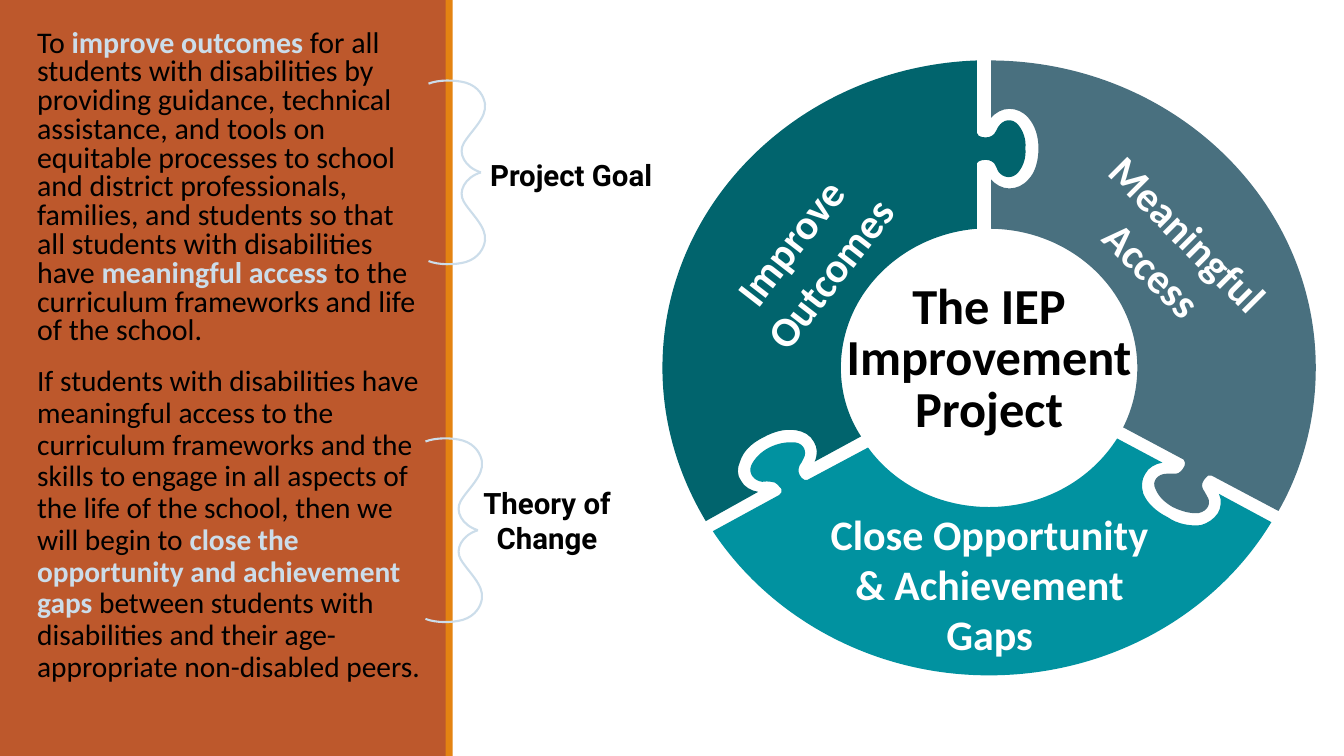
from pptx import Presentation
from pptx import util as u
from pptx.dml import color as c
from pptx.enum import shapes, text
from pptx.oxml import xmlchemy as xml

PX = 9144
BLACK, WHITE, PALE = "000000", "FFFFFF", "CCDDEA"

LEFT = [
    (735, 477), (731, 472, 731, 464, 734, 458), (737, 448, 745, 440, 757, 434),
    (768, 428, 779, 425, 790, 427), (797, 428, 804, 432, 807, 438),
    (811, 444, 811, 451, 808, 458), (854, 433), (841, 413, 834, 390, 834, 365),
    (834, 292, 894, 233, 969, 227), (969, 162), (970, 161, 971, 159, 974, 159),
    (979, 158, 983, 159, 986, 162), (988, 165, 989, 168, 990, 170),
    (995, 177, 1004, 178, 1010, 171), (1015, 165, 1018, 156, 1017, 147),
    (1018, 139, 1015, 130, 1010, 124), (1004, 117, 995, 118, 990, 126),
    (989, 128, 988, 130, 986, 133), (983, 136, 979, 137, 974, 136),
    (971, 136, 970, 134, 969, 132), (969, 60), (796, 66, 657, 200, 657, 365),
    (657, 420, 673, 472, 700, 517), (752, 488), (745, 487, 738, 483, 735, 477),
]
RIGHT = [
    (1001, 108), (1008, 108, 1015, 111, 1020, 117),
    (1027, 125, 1030, 136, 1030, 147), (1030, 159, 1027, 171, 1020, 178),
    (1015, 184, 1008, 187, 1001, 187), (994, 187, 987, 183, 983, 178),
    (983, 227), (1063, 228, 1128, 289, 1128, 365),
    (1128, 386, 1123, 406, 1114, 424), (1174, 456),
    (1175, 458, 1176, 460, 1175, 462), (1173, 466, 1170, 470, 1166, 470),
    (1162, 470, 1160, 470, 1157, 470), (1148, 470, 1142, 478, 1146, 485),
    (1149, 493, 1156, 499, 1163, 503), (1171, 507, 1181, 510, 1189, 509),
    (1198, 507, 1202, 499, 1197, 492), (1196, 490, 1195, 488, 1193, 485),
    (1191, 481, 1193, 477, 1196, 474), (1197, 472, 1199, 471, 1202, 472),
    (1268, 507), (1292, 465, 1305, 416, 1305, 365),
    (1305, 197, 1161, 61, 983, 60), (983, 117),
    (987, 112, 994, 108, 1001, 108),
]
BASE = [
    (1208, 509), (1204, 515, 1198, 519, 1191, 521),
    (1180, 522, 1168, 520, 1158, 513), (1146, 507, 1138, 499, 1134, 490),
    (1132, 483, 1132, 476, 1136, 470), (1139, 464, 1146, 460, 1153, 459),
    (1108, 435), (1082, 476, 1035, 503, 981, 503),
    (931, 503, 887, 480, 861, 444), (801, 476),
    (799, 477, 797, 476, 795, 474), (792, 470, 791, 467, 793, 462),
    (794, 460, 796, 458, 797, 455), (801, 448, 797, 440, 789, 439),
    (780, 438, 771, 440, 763, 444), (755, 448, 748, 455, 745, 462),
    (742, 470, 748, 477, 756, 478), (759, 478, 762, 477, 765, 478),
    (770, 478, 772, 482, 775, 485), (776, 487, 775, 490, 773, 491),
    (707, 527), (764, 613, 866, 670, 981, 670),
    (1101, 670, 1206, 609, 1261, 518), (1209, 490),
    (1212, 496, 1211, 504, 1208, 509),
]
BRACE = [
    (0, 88), (10, 92, 26, 92, 37, 89), (50, 85, 55, 75, 56, 68),
    (58, 54, 42, 41, 35, 29), (29, 19, 36, 5, 52, 0),
]

GOAL = [
    ("To ", BLACK), ("improve outcomes ", PALE),
    ("for all students with disabilities by providing guidance, technical "
     "assistance, and tools on equitable processes to school and district "
     "professionals, families, and students so that all students with "
     "disabilities have ", BLACK),
    ("meaningful access ", PALE),
    ("to the curriculum frameworks and life of the school.", BLACK),
]
THEORY = [
    ("If students with disabilities have meaningful access to the curriculum "
     "frameworks and the skills to engage in all aspects of the life of the "
     "school, then we will begin to ", BLACK),
    ("close the opportunity and achievement gaps ", PALE),
    ("between students with disabilities and their age-appropriate "
     "non-disabled peers.", BLACK),
]


def rgb(code):
    return c.RGBColor.from_string(code)


def put(obj, form):
    for key, val in form.items():
        setattr(obj, key, val)


def paint(fill, code):
    fill.solid()
    fill.fore_color.rgb = rgb(code)


def bar(slide, box, code):
    shape = slide.shapes.add_shape(
        shapes.MSO_SHAPE.RECTANGLE, *[n * PX for n in box])
    shape.shadow.inherit = False
    paint(shape.fill, code)
    shape.line.fill.background()


def write(para, runs, font, form):
    put(para, form)
    for words, code, bold in runs:
        run = para.add_run()
        run.text = words
        put(run.font, {**font, "bold": bold})
        run.font.color.rgb = rgb(code)


def frame(slide, box, pad):
    shape = slide.shapes.add_textbox(*[n * PX for n in box])
    put(shape.text_frame, {
        "word_wrap": True, "vertical_anchor": text.MSO_ANCHOR.TOP,
        "margin_left": 10 * PX, "margin_right": 10 * PX,
        "margin_top": pad * PX, "margin_bottom": pad * PX})
    return shape


def label(slide, box, words, size, code=BLACK, face="Calibri", turn=0,
          pad=10, space=1.0):
    shape = frame(slide, box, pad)
    shape.rotation = turn
    write(shape.text_frame.paragraphs[0], [(words, code, True)],
          {"size": u.Pt(size), "name": face},
          {"alignment": text.PP_ALIGN.CENTER, "line_spacing": space})


def body(slide):
    area = frame(slide, (17, 25, 417, 696), 5).text_frame
    paras = [area.paragraphs[0], area.add_paragraph()]
    for para, runs, size, space, gap in zip(
            paras, (GOAL, THEORY), (21.4, 21), (0.8, 0.9), (0, 14)):
        write(para, [(words, code, code == PALE) for words, code in runs],
              {"size": u.Pt(size), "name": "Calibri"},
              {"line_spacing": space, "space_before": u.Pt(gap)})
        para._p.get_or_add_pPr().set("marL", str(10 * PX))


def curve(slide, segs, shut):
    dots = [seg[i:i + 2] for seg in segs for i in range(0, len(seg), 2)]
    pen = slide.shapes.build_freeform(*dots[0], scale=PX)
    pen.add_line_segments(dots[1:], close=shut)
    shape = pen.convert_to_shape()
    shape.shadow.inherit = False
    lines = iter(shape._element.xpath(".//a:path/a:lnTo"))
    for seg in segs[1:]:
        first = next(lines)
        if len(seg) == 6:
            bend = xml.OxmlElement("a:cubicBezTo")
            first.addprevious(bend)
            for line in (first, next(lines), next(lines)):
                bend.append(line[0])
                line.getparent().remove(line)
    return shape


def piece(slide, segs, code):
    shape = curve(slide, segs, True)
    paint(shape.fill, code)
    shape.line.fill.background()


def brace(slide, left, mid):
    for side in (1, -1):
        segs = [tuple(mid + side * n if i % 2 else left + n
                      for i, n in enumerate(seg)) for seg in BRACE]
        shape = curve(slide, segs, False)
        shape.fill.background()
        shape.line.color.rgb = rgb(PALE)
        shape.line.width = u.Pt(1.5)


def main():
    deck = Presentation()
    put(deck, {"slide_width": 1333 * PX, "slide_height": 750 * PX})
    slide = deck.slides.add_slide(deck.slide_layouts[6])
    bar(slide, (0, 0, 443, 750), "BD582C")
    bar(slide, (442, 0, 7, 750), "E48312")
    body(slide)
    label(slide, (466, 146, 201, 56), "Project Goal", 21, face="Roboto")
    label(slide, (428, 471, 229, 91), "Theory of Change", 21, face="Roboto")
    piece(slide, LEFT, "01646D")
    piece(slide, RIGHT, "49707F")
    piece(slide, BASE, "0192A0")
    label(slide, (800, 276, 362, 224), "The IEP Improvement Project", 36,
          pad=5, space=0.85)
    label(slide, (660, 195, 286, 121), "Improve Outcomes", 30, WHITE,
          turn=307.8)
    label(slide, (1018, 189, 286, 121), "Meaningful Access", 30, WHITE,
          turn=45)
    label(slide, (806, 494, 351, 172),
          "Close Opportunity & Achievement Gaps", 30, WHITE)
    brace(slide, 422, 526)
    brace(slide, 425, 171)
    deck.save("out.pptx")


if __name__ == "__main__":
    main()
